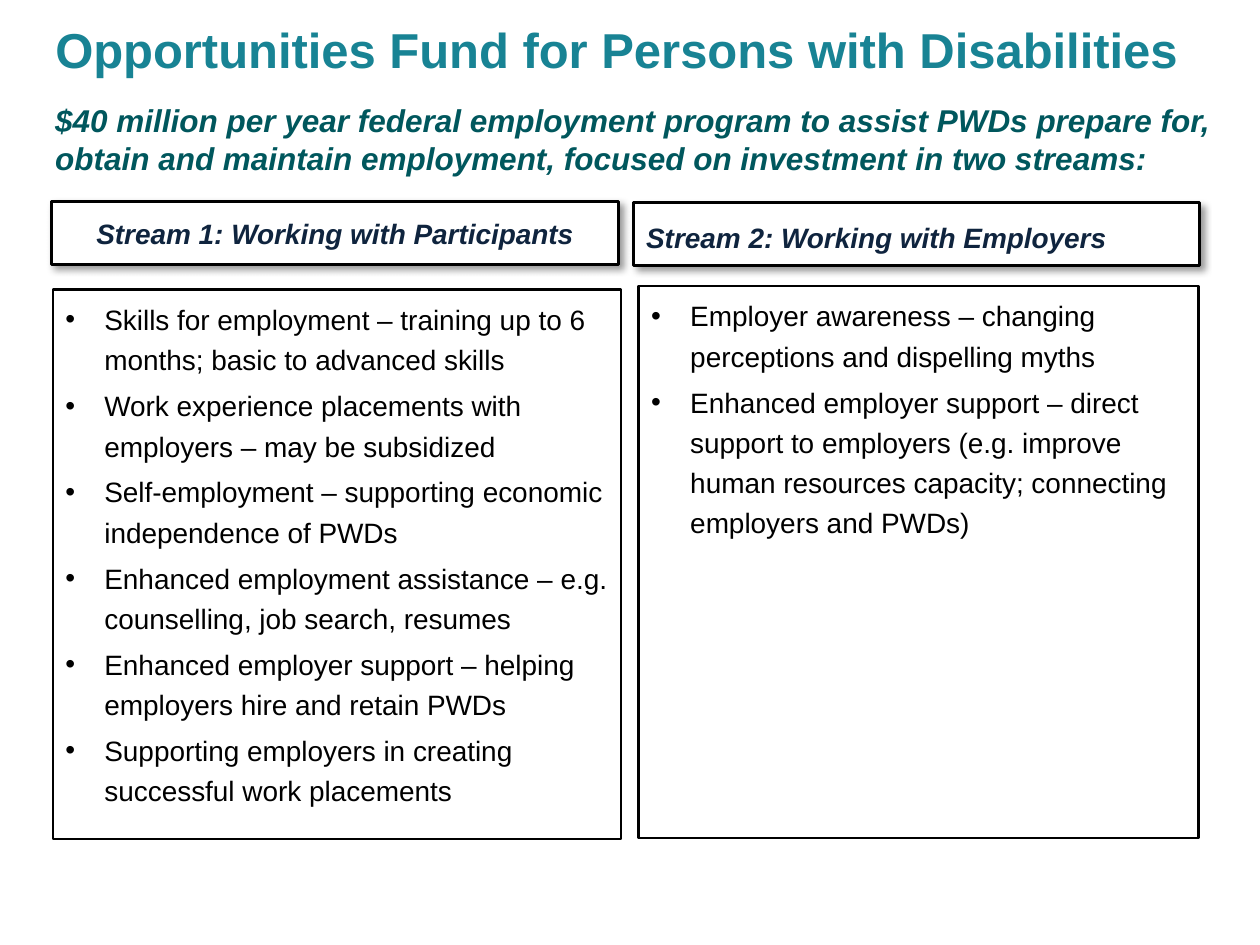
from lxml.etree import SubElement
from pptx import Presentation
from pptx.dml.color import RGBColor
from pptx.enum.shapes import MSO_SHAPE
from pptx.enum.text import MSO_ANCHOR, PP_ALIGN
from pptx.oxml.ns import qn
from pptx.util import Inches, Pt

WHITE = RGBColor(0xFF, 0xFF, 0xFF)
BLACK = RGBColor(0, 0, 0)
NAVY = RGBColor(0x0F, 0x24, 0x3E)
DARK_TEAL = RGBColor(0x00, 0x57, 0x5D)
TEAL = RGBColor(0x18, 0x83, 0x94)

TITLE_FONT = {"size": Pt(28), "bold": True}
INTRO_FONT = {"size": Pt(18), "bold": True, "italic": True}
HEADING_FONT = {"size": Pt(16), "bold": True, "italic": True}
BODY_FONT = {"size": Pt(16)}
LEFT = {"alignment": PP_ALIGN.LEFT}
CENTERED = {"alignment": PP_ALIGN.CENTER}
HEADING_LEVEL = {**LEFT, "level": 1, "line_spacing": 1.17}
BULLET_LEVEL = {**LEFT, "level": 1, "line_spacing": 1.2}
BULLET_INDENT = Inches(0.31)
BULLET_GAP = Pt(3.2)

PARTICIPANT_ITEMS = [
    "Skills for employment – training up to 6 months; basic to advanced skills",
    "Work experience placements with employers – may be subsidized",
    "Self-employment – supporting economic independence of PWDs",
    "Enhanced employment assistance – e.g. counselling, job search, resumes",
    "Enhanced employer support – helping employers hire and retain PWDs",
    "Supporting employers in creating successful work placements",
]
EMPLOYER_ITEMS = [
    "Employer awareness – changing perceptions and dispelling myths",
    "Enhanced employer support – direct support to employers (e.g. improve "
    "human resources capacity; connecting employers and PWDs)",
]


def set_attributes(target, values):
    for name, value in values.items():
        setattr(target, name, value)


def set_indent(paragraph, margin, first_line):
    properties = paragraph._p.get_or_add_pPr()
    properties.set("marL", str(margin))
    properties.set("indent", str(first_line))
    return properties


def write_text(paragraph, text, font_values, color, paragraph_values):
    set_attributes(paragraph, paragraph_values)
    run = paragraph.add_run()
    run.text = text
    set_attributes(run.font, {"name": "Arial", **font_values})
    run.font.color.rgb = color


def add_text(slide, place, text, font_values, color, anchor):
    frame = slide.shapes.add_textbox(*map(Inches, place)).text_frame
    set_attributes(frame, {"word_wrap": True, "vertical_anchor": anchor})
    write_text(frame.paragraphs[0], text, font_values, color, LEFT)


def add_box(slide, place, anchor):
    box = slide.shapes.add_shape(MSO_SHAPE.RECTANGLE, *map(Inches, place))
    box.shadow.inherit = False
    box.line.color.rgb = BLACK
    box.line.width = Pt(1.5)
    set_attributes(box.text_frame, {"word_wrap": True, "vertical_anchor": anchor})
    return box


def add_shadow(shape):
    effects = shape._element.spPr.find(qn("a:effectLst"))
    shadow = SubElement(effects, qn("a:outerShdw"), blurRad=str(Pt(4)),
                        dist=str(Pt(3)), dir="2700000", algn="tl", rotWithShape="0")
    color = SubElement(shadow, qn("a:srgbClr"), val=str(BLACK))
    SubElement(color, qn("a:alpha"), val="40000")


def add_heading(slide, place, text, paragraph_values):
    box = add_box(slide, place, MSO_ANCHOR.MIDDLE)
    box.fill.solid()
    box.fill.fore_color.rgb = WHITE
    add_shadow(box)
    paragraph = box.text_frame.paragraphs[0]
    set_indent(paragraph, 0, 0)
    write_text(paragraph, text, HEADING_FONT, NAVY, paragraph_values)


def add_bullet_box(slide, place, items):
    box = add_box(slide, place, MSO_ANCHOR.TOP)
    box.fill.background()
    frame = box.text_frame
    for index, item in enumerate(items):
        paragraph = frame.add_paragraph() if index else frame.paragraphs[0]
        properties = set_indent(paragraph, BULLET_INDENT, -BULLET_INDENT)
        SubElement(properties, qn("a:buFont"), typeface="Arial")
        SubElement(properties, qn("a:buChar"), char="•")
        if index:
            paragraph.space_before = BULLET_GAP
        write_text(paragraph, item, BODY_FONT, BLACK, BULLET_LEVEL)


def main():
    presentation = Presentation()
    presentation.slide_width = Inches(10)
    presentation.slide_height = Inches(7.5)
    slide = presentation.slides.add_slide(presentation.slide_layouts[6])

    # Stream headings
    add_heading(slide, (0.41, 1.6, 4.5, 0.5),
                "Stream 1: Working with Participants", CENTERED)
    add_heading(slide, (5.03, 1.61, 4.49, 0.5),
                "Stream 2: Working with Employers", HEADING_LEVEL)

    # Stream contents
    add_bullet_box(slide, (0.42, 2.3, 4.51, 4.36), PARTICIPANT_ITEMS)
    add_bullet_box(slide, (5.07, 2.27, 4.44, 4.38), EMPLOYER_ITEMS)

    # Introduction and title
    add_text(slide, (0.34, 0.75, 9.8, 0.71),
             "$40 million per year federal employment program to assist PWDs "
             "prepare for, obtain and maintain employment, focused on investment "
             "in two streams:", INTRO_FONT, DARK_TEAL, MSO_ANCHOR.TOP)
    add_text(slide, (0.34, 0.11, 9.38, 0.55),
             "Opportunities Fund for Persons with Disabilities",
             TITLE_FONT, TEAL, MSO_ANCHOR.MIDDLE)

    presentation.save("out.pptx")


if __name__ == "__main__":
    main()
